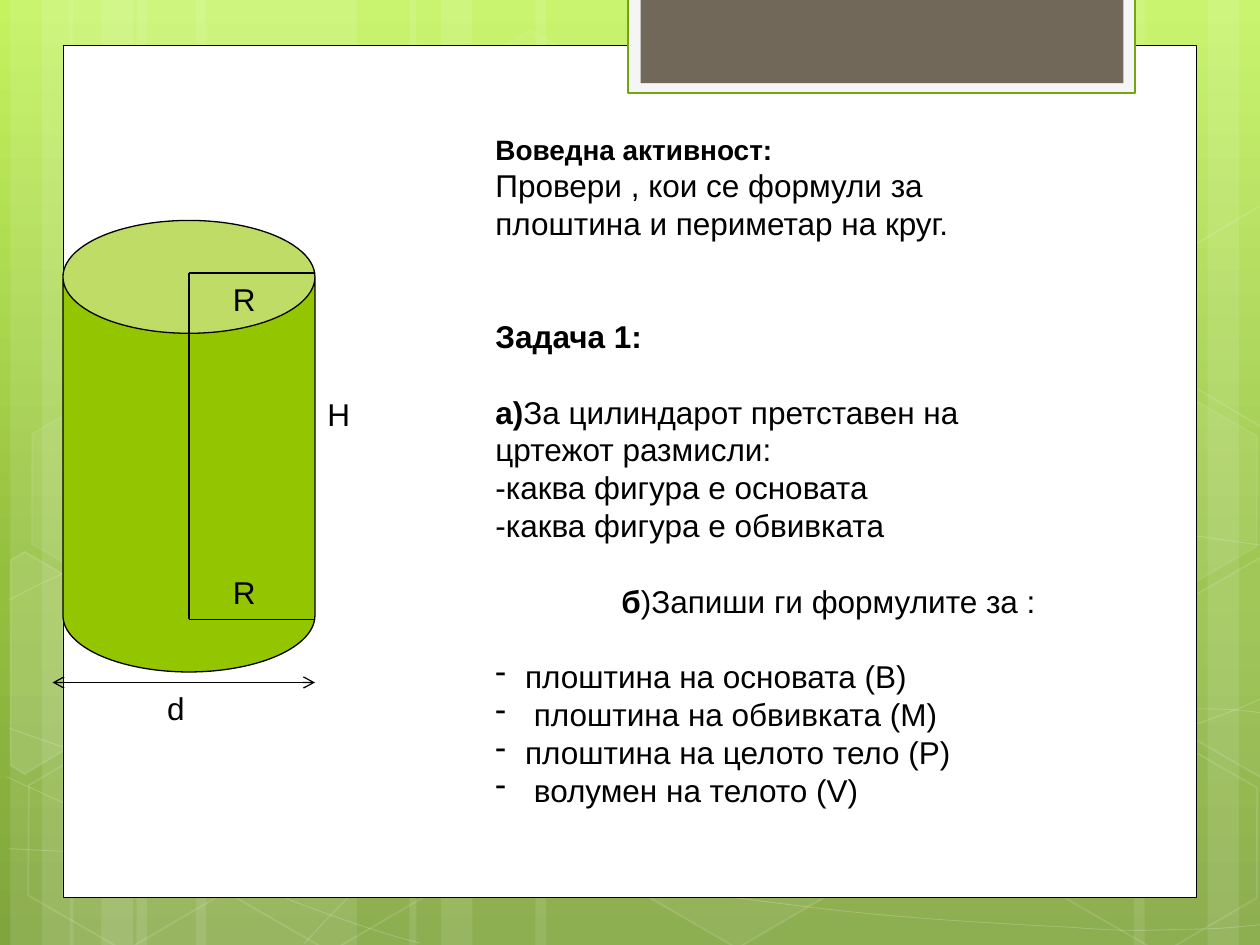
import copy
import math

import pptx
import pptx.util
import pptx.dml.color
import pptx.enum.shapes
import pptx.oxml
import pptx.oxml.ns
from pptx.util import Pt

COLORS = {
    "bg_top": "C3F35F", "bg_mid": "93BF3F", "bg_end": "81A53E",
    "white": "FFFFFF", "black": "000000", "tab_edge": "74A510",
    "tab_rim": "F5F5F5", "tab": "71685A", "cylinder": "94C600",
}
MSO = pptx.enum.shapes.MSO_SHAPE
qn = pptx.oxml.ns.qn


def paint(fmt, color, alpha=None):
    """Solid fill with an optional opacity in percent; no colour means no fill."""
    if color is None:
        fmt.background()
        return
    fmt.solid()
    fmt.fore_color.rgb = pptx.dml.color.RGBColor.from_string(COLORS[color])
    if alpha is not None:
        node = fmt._xPr.find(qn("a:solidFill"))[0]
        node.append(node.makeelement(qn("a:alpha"), {"val": str(alpha * 1000)}))


def style(sp, fill=None, fill_alpha=None, line=None, width=0.75, line_alpha=None):
    sp.shadow.inherit = False
    paint(sp.fill, fill, fill_alpha)
    paint(sp.line.fill, line, line_alpha)
    if line:
        sp.line.width = Pt(width)


prs = pptx.Presentation()
prs.slide_width, prs.slide_height = Pt(720), Pt(540)
s = prs.slides.add_slide(prs.slide_layouts[6])
shapes = s.shapes

# Background gradient, top to bottom
bg = s.background.fill
bg.gradient()
bg.gradient_angle = 270
stop_list = s.background._cSld.find(".//" + qn("a:gsLst"))
stop_list.append(copy.deepcopy(stop_list[-1]))
stops = (("bg_top", 0), ("bg_mid", 0.62), ("bg_end", 1))
for stop, (name, position) in zip(bg.gradient_stops, stops):
    stop.color.rgb = pptx.dml.color.RGBColor.from_string(COLORS[name])
    stop.position = position

# Translucent vertical bands: left, width, rotation
bands = [(78, 126, 0), (6, 36, 0), (24, 60, 0), (112, 126, 0), (40, 36, 0), (58, 60, 0),
         (528, 126, 180), (690, 36, 180), (648, 60, 180),
         (306, 222, 0), (234, 36, 0), (252, 60, 0)]
for x, w, rotation in bands:
    sp = shapes.add_shape(MSO.RECTANGLE, Pt(x), 0, Pt(w), Pt(540))
    sp.rotation = rotation
    style(sp, "white", 10)

# Sweeping curves: a start point, then Bezier segments of three points each
curves = [
    [(5, 485), (44, 487), (83, 489), (137, 488), (191, 487), (258, 486), (330, 479),
     (402, 472), (504, 458), (570, 444), (636, 431), (703, 409), (725, 397)],
    [(5, 343), (26, 332), (47, 321), (87, 310), (128, 300), (186, 285), (250, 279),
     (314, 274), (392, 273), (471, 279), (550, 284), (682, 307), (725, 312)],
    [(4, 444), (91, 484), (178, 523), (240, 539)],
    [(5, 416), (27, 424), (50, 432), (92, 444), (134, 454), (197, 472), (257, 485),
     (317, 497), (392, 510), (452, 517), (512, 525), (576, 528), (614, 530),
     (652, 533), (662, 531), (680, 531), (699, 531), (712, 529), (725, 528)],
    [(174, 539), (187, 525), (200, 510), (217, 498), (235, 485), (259, 470), (279, 460),
     (300, 450), (312, 446), (338, 438), (364, 431), (413, 421), (438, 416),
     (464, 411), (467, 411), (490, 410), (512, 408), (547, 405), (572, 405),
     (597, 404), (638, 405), (638, 405), (654, 405), (670, 405), (686, 405),
     (699, 405), (711, 406), (718, 407), (724, 408), (722, 407), (724, 408)],
]
for pts in curves:
    pts = [(Pt(x), Pt(y)) for x, y in pts]
    fb = shapes.build_freeform(*pts[0])
    fb.add_line_segments(pts[1:], close=False)
    sp = fb.convert_to_shape()
    outline = sp._element.find(".//" + qn("a:path"))
    steps = outline.findall(qn("a:lnTo"))
    for i in range(0, len(steps), 3):
        bezier = outline.makeelement(qn("a:cubicBezTo"), {})
        outline.append(bezier)
        for step in steps[i:i + 3]:
            bezier.append(step[0])
            outline.remove(step)
    style(sp, line="white", width=0.5, line_alpha=20)

# Hexagons: left, top, fill opacity, line opacity
hexagons = [(240.5, 26, 4, 8), (358, 424, 6, 12), (8, 425.5, None, 12),
            (10, 224.6, 7, 8), (125.3, 426, None, 12), (542, 326, 10, 12),
            (600.5, 427, None, 12), (600.5, 226, 7, 8)]
for x, y, alpha, line_alpha in hexagons:
    sp = shapes.add_shape(MSO.HEXAGON, Pt(x), Pt(y), Pt(126), Pt(109.4))
    sp.adjustments[0] = 0.285
    sp.rotation = 30
    style(sp, "white" if alpha else None, alpha, "white", 1, line_alpha)

# Hexagons cut by the slide edges: centre, corners as seen, fill opacity
cut_hexagons = [
    ((26, 385.2), [(6, 320), (14, 315), (69, 347), (68, 410), (14, 442), (6, 437)], 10),
    ((709.2, 374.4), [(667, 349), (721, 318), (727, 321), (726, 441), (721, 444),
                      (667, 413)], 4),
    ((709.2, 173.5), [(667, 149), (721, 117), (727, 121), (726, 241), (721, 244),
                      (667, 212)], None),
]
cos, sin = math.cos(math.radians(30)), math.sin(math.radians(30))
for (cx, cy), corners, alpha in cut_hexagons:
    # Turn the corners back, then let the shape's rotation restore them
    pts = [(Pt(cx + (x - cx) * cos + (y - cy) * sin),
            Pt(cy - (x - cx) * sin + (y - cy) * cos)) for x, y in corners]
    fb = shapes.build_freeform(*pts[0])
    fb.add_line_segments(pts[1:], close=True)
    sp = fb.convert_to_shape()
    sp.rotation = 30
    style(sp, "white" if alpha else None, alpha, "white", 1, 12)

# White panel, top tab and cylinder
solids = [
    (MSO.RECTANGLE, (36, 26, 648, 487), "white", "black", 0.5),
    (MSO.RECTANGLE, (359, -1.5, 289.7, 54.7), "tab_rim", "tab_edge", 1.25),
    (MSO.RECTANGLE, (366, -1.5, 276, 49), "tab", None, 0),
    (MSO.CAN, (36, 126, 144, 258), "cylinder", "black", 0.75),
]
for kind, box, fill, line, width in solids:
    sp = shapes.add_shape(kind, *map(Pt, box))
    style(sp, fill, line=line, width=width)
sp.adjustments[0] = 0.448

# Radii, axis and the diameter arrow
lines = [(108, 354, 180, 354), (108, 354, 108, 156), (108, 156, 180, 156),
         (30, 390, 180, 390)]
for ends in lines:
    c = shapes.add_connector(pptx.enum.shapes.MSO_CONNECTOR.STRAIGHT, *map(Pt, ends))
    paint(c.line.fill, "black")
    c.line.width = Pt(0.75)
    spPr = c._element.spPr
    spPr.append(spPr.makeelement(qn("a:effectLst"), {}))
ln = spPr.find(qn("a:ln"))
for end in ("a:headEnd", "a:tailEnd"):
    ln.append(ln.makeelement(qn(end), {"type": "arrow"}))

# Text: box, then paragraphs of (runs, size, space before, left margin, bullet)
GAP = 21.6
task = [
    ([("Воведна активност:", True)], 16, 0, 0, False),
    ([("Провери , кои се формули за плоштина и периметар на круг.", False)], 18, 0, 0, False),
    ([("Задача 1:", True)], 18, 2 * GAP, 0, False),
    ([("а)", True), ("За цилиндарот претставен на цртежот размисли:", False)],
     18, GAP, 0, False),
    ([("-каква фигура е основата", False)], 18, 0, 0, False),
    ([("-каква фигура е обвивката", False)], 18, 0, 0, False),
    ([("б", True), (")Запиши ги формулите за :", False)], 18, GAP, 72, False),
]
formulas = ["плоштина на основата (В)", " плоштина на обвивката (М)",
            "плоштина на целото тело (P)", " волумен на телото (V)"]
for i, text in enumerate(formulas):
    task.append(([(text, False)], 18, 0 if i else GAP, 17, True))

texts = [((276, 72, 336, 419), task)]
for text, x, y, w in (("H", 180, 222, 24), ("R", 126, 324, 36),
                      ("R", 126, 156.4, 24), ("d", 88.5, 390, 27.5)):
    texts.append(((x, y, w, 28.8), [([(text, False)], 18, 0, 0, False)]))

for box, paragraphs in texts:
    tf = shapes.add_textbox(*map(Pt, box)).text_frame
    tf.word_wrap = True
    for i, (runs, size, before, margin, bullet) in enumerate(paragraphs):
        p = tf.add_paragraph() if i else tf.paragraphs[0]
        for key, value in {"space_before": Pt(before), "line_spacing": Pt(size * 1.2)}.items():
            setattr(p, key, value)
        pPr = p._p.get_or_add_pPr()
        pPr.set("marL", str(Pt(margin)))
        if bullet:
            pPr.set("indent", str(-Pt(margin)))
            pPr.append(pPr.makeelement(qn("a:buChar"), {"char": "-"}))
        for text, bold in runs:
            r = p.add_run()
            r.text = text
            for key, value in {"name": "Arial", "size": Pt(size), "bold": bold}.items():
                setattr(r.font, key, value)
            paint(r.font.fill, "black")

prs.save("out.pptx")
